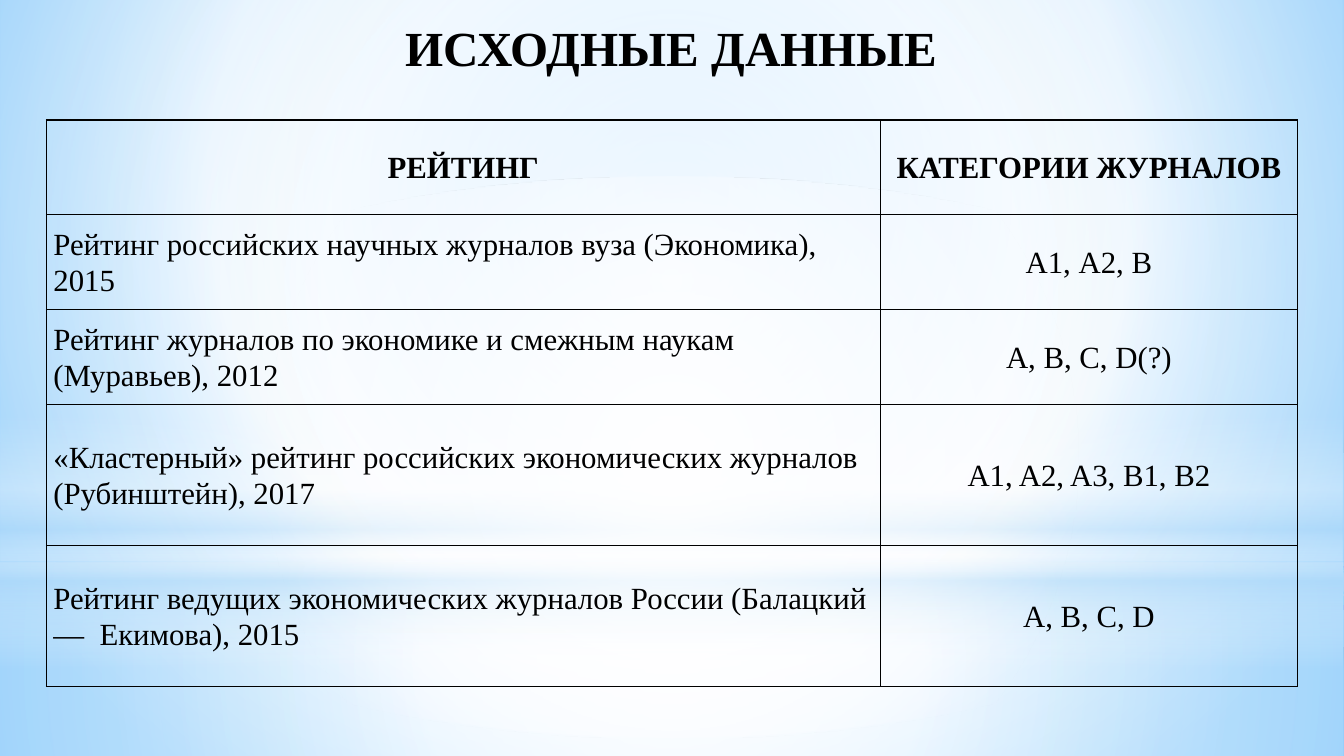
from dataclasses import dataclass

import pptx
import pptx.dml.color
import pptx.enum.shapes
import pptx.enum.text
import pptx.oxml
import pptx.oxml.ns
import pptx.util

Inches = pptx.util.Inches
Shapes = pptx.enum.shapes.MSO_SHAPE
Align = pptx.enum.text.PP_ALIGN
Anchor = pptx.enum.text.MSO_ANCHOR


@dataclass(frozen=True)
class Theme:
    font: str = "Times New Roman"
    ink: str = "000000"
    white: str = "FFFFFF"
    haze: str = "B4DCFA"
    sky: str = "9ED5FF"
    deep_sky: str = "5BB9FF"
    title_size: int = 35
    table_size: int = 22
    border_width: int = 1


THEME = Theme()
SLIDE_WIDTH, SLIDE_HEIGHT = 13.33, 7.5
CENTRE = (50, 50, 50, 50)
COLUMN_WIDTHS = (8.27, 4.14)
ROW_HEIGHTS = (0.94, 0.94, 0.94, 1.4, 1.4)
RATINGS = (
    ("РЕЙТИНГ", "КАТЕГОРИИ ЖУРНАЛОВ"),
    ("Рейтинг российских научных журналов вуза (Экономика), 2015", "А1, А2, В"),
    ("Рейтинг журналов по экономике и смежным наукам (Муравьев), 2012", "А, В, С, D(?)"),
    ("«Кластерный» рейтинг российских экономических журналов (Рубинштейн), 2017",
     "A1, A2, A3, B1, B2"),
    ("Рейтинг ведущих экономических журналов России (Балацкий —  Екимова), 2015",
     "A, B, C, D"),
)


def drawing_xml(tag, content, attributes=""):
    namespace = pptx.oxml.ns.nsdecls("a")
    return pptx.oxml.parse_xml(f"<a:{tag} {namespace} {attributes}>{content}</a:{tag}>")


def paint_gradient(fill, properties, stops, focus=None):
    """Fill with (position, colour, opacity) stops: circular round focus, or downwards."""
    fill.solid()
    stop_xml = "".join(
        f'<a:gs pos="{position * 1000}"><a:srgbClr val="{colour}">'
        f'<a:alpha val="{opacity * 1000}"/></a:srgbClr></a:gs>'
        for position, colour, opacity in stops)
    if focus:
        left, top, right, bottom = (side * 1000 for side in focus)
        direction = (f'<a:path path="circle"><a:fillToRect l="{left}" t="{top}" '
                     f'r="{right}" b="{bottom}"/></a:path>')
    else:
        direction = '<a:lin ang="5400000" scaled="0"/>'
    gradient = drawing_xml("gradFill", f"<a:gsLst>{stop_xml}</a:gsLst>{direction}",
                           'rotWithShape="1"')
    solid = properties.find(pptx.oxml.ns.qn("a:solidFill"))
    properties.replace(solid, gradient)


def write_text(frame, text, *, size, bold=False, align=Align.LEFT, spacing=1.0):
    paragraph = frame.paragraphs[0]
    paragraph.alignment = align
    paragraph.line_spacing = spacing
    run = paragraph.add_run()
    run.text = text
    run.font.name = THEME.font
    run.font.size = pptx.util.Pt(size)
    run.font.bold = bold
    run.font.color.rgb = pptx.dml.color.RGBColor.from_string(THEME.ink)


def add_glow(slide, kind, box, stops, focus=None):
    shape = slide.shapes.add_shape(kind, *map(Inches, box))
    shape.shadow.inherit = False
    shape.line.fill.background()
    paint_gradient(shape.fill, shape._element.spPr, stops, focus)


def draw_backdrop(slide, width, height):
    background = slide.background.fill
    properties = slide._element.find(".//" + pptx.oxml.ns.qn("p:bgPr"))
    paint_gradient(background, properties,
                   ((0, THEME.sky, 100), (60, THEME.white, 100), (100, THEME.deep_sky, 100)),
                   (20, 10, 20, 60))
    horizon = 5.58
    white, haze = THEME.white, THEME.haze
    add_glow(slide, Shapes.RECTANGLE, (0, horizon, width, height - horizon),
             ((0, white, 91), (37, white, 76), (100, haze, 79)), CENTRE)
    add_glow(slide, Shapes.RECTANGLE, (0, 0, width, horizon),
             ((0, white, 89), (48, white, 62), (100, haze, 79)), CENTRE)
    add_glow(slide, Shapes.RECTANGLE, (0, 4.12, width, 2.5),
             ((0, white, 0), (29, white, 30), (45, haze, 40),
              (55, white, 26), (65, haze, 60), (100, white, 0)))
    add_glow(slide, Shapes.OVAL, (0, 1.75, width, horizon),
             ((0, white, 100), (56, white, 0)), CENTRE)


def add_title(slide, text, box):
    frame = slide.shapes.add_textbox(*map(Inches, box)).text_frame
    frame.word_wrap = True
    frame.vertical_anchor = Anchor.MIDDLE
    write_text(frame, text, size=THEME.title_size, bold=True,
               align=Align.CENTER, spacing=0.9)


def style_cell(cell):
    properties = cell._tc.get_or_add_tcPr()
    width = pptx.util.Pt(THEME.border_width)
    for side in ("lnL", "lnR", "lnT", "lnB"):
        properties.append(drawing_xml(
            side, f'<a:solidFill><a:srgbClr val="{THEME.ink}"/></a:solidFill>',
            f'w="{width}"'))
    cell.fill.background()
    cell.vertical_anchor = Anchor.MIDDLE
    cell.margin_left = cell.margin_right = Inches(0.07)
    cell.margin_top = cell.margin_bottom = 0


def add_ratings_table(slide, left, top):
    table = slide.shapes.add_table(
        len(ROW_HEIGHTS), len(COLUMN_WIDTHS), Inches(left), Inches(top),
        Inches(sum(COLUMN_WIDTHS)), Inches(sum(ROW_HEIGHTS))).table
    table.horz_banding = False
    for column, width in zip(table.columns, COLUMN_WIDTHS):
        column.width = Inches(width)
    for row, height in zip(table.rows, ROW_HEIGHTS):
        row.height = Inches(height)
    for row_index, texts in enumerate(RATINGS):
        is_header = row_index == 0
        for column_index, text in enumerate(texts):
            cell = table.cell(row_index, column_index)
            style_cell(cell)
            centred = is_header or column_index == 1
            write_text(cell.text_frame, text, size=THEME.table_size, bold=is_header,
                       align=Align.CENTER if centred else Align.LEFT, spacing=1.07)


def main():
    presentation = pptx.Presentation()
    presentation.slide_width = Inches(SLIDE_WIDTH)
    presentation.slide_height = Inches(SLIDE_HEIGHT)
    slide = presentation.slides.add_slide(presentation.slide_layouts[6])
    draw_backdrop(slide, SLIDE_WIDTH, SLIDE_HEIGHT)
    add_title(slide, "ИСХОДНЫЕ ДАННЫЕ", (0, 0.15, SLIDE_WIDTH, 0.71))
    add_ratings_table(slide, 0.46, 1.19)
    presentation.save("out.pptx")


if __name__ == "__main__":
    main()
